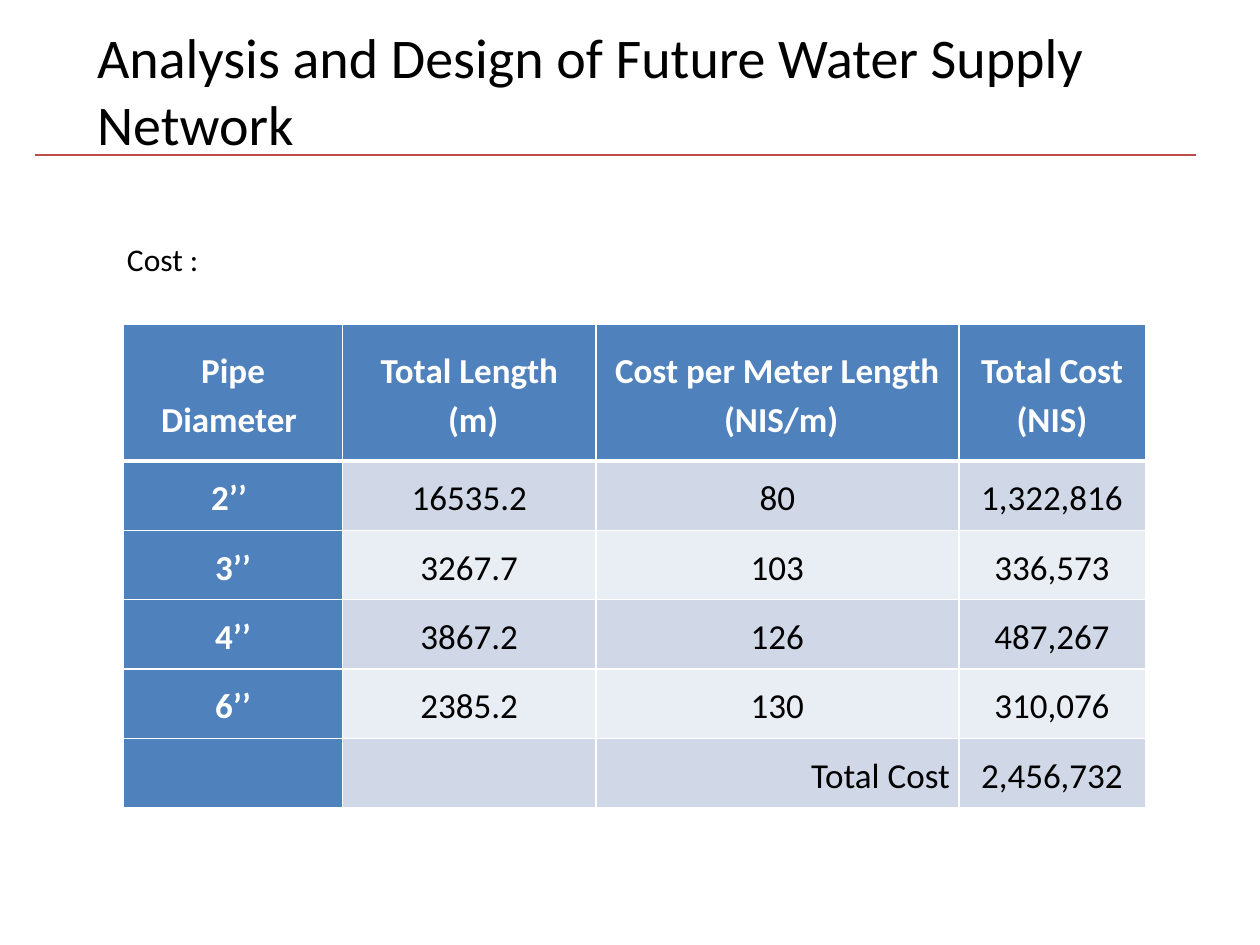
from lxml import etree
from pptx import Presentation
from pptx.dml.color import RGBColor
from pptx.enum.shapes import MSO_CONNECTOR
from pptx.enum.text import MSO_ANCHOR, MSO_AUTO_SIZE, PP_ALIGN
from pptx.oxml.ns import qn
from pptx.util import Inches, Pt

LEFT, CENTER, RIGHT = PP_ALIGN.LEFT, PP_ALIGN.CENTER, PP_ALIGN.RIGHT
TOP, MIDDLE = MSO_ANCHOR.TOP, MSO_ANCHOR.MIDDLE
NO_AUTOFIT = MSO_AUTO_SIZE.NONE
STRAIGHT = MSO_CONNECTOR.STRAIGHT
TITLE_ONLY = 5

TITLE = "Analysis and Design of Future Water Supply Network"
CAPTION = "Cost :"
ROWS = [
    ["Pipe Diameter ", "Total Length\n (m)", "Cost per Meter Length\n (NIS/m)", "Total Cost (NIS)"],
    ["2’’ ", "16535.2", "80", "1,322,816"],
    ["3’’", "3267.7", "103", "336,573"],
    ["4’’", "3867.2", "126", "487,267"],
    ["6’’", "2385.2", "130", "310,076"],
    ["", "", "Total Cost", "2,456,732"],
]
COLORS = {
    "text": "000000",
    "white": "FFFFFF",
    "rule": "BF4C48",
    "header": "4F81BD",
    "odd": "D0D8E8",
    "even": "E9EDF4",
}
FONT = "Calibri"
TITLE_BOX = (0.67, 0.13, 8.43, 1.18)
RULE_ENDS = (0.28, 1.23, 9.49, 1.23)
CAPTION_BOX = (0.91, 1.86, 3.86, 0.4)
TABLE_ORIGIN = (0.98, 2.57)
COLUMN_WIDTHS = [1.74, 2.01, 2.88, 1.48]
ROW_HEIGHTS = [1.09] + [0.55] * (len(ROWS) - 1)
CELL_FORMAT = {
    "margin_left": Inches(0.07),
    "margin_right": Inches(0.07),
    "margin_top": 0,
    "margin_bottom": 0,
    "vertical_anchor": MIDDLE,
}
FRAME_FORMAT = {"word_wrap": True, "auto_size": NO_AUTOFIT, "vertical_anchor": TOP}


def color(name):
    return RGBColor.from_string(COLORS[name])


def apply_format(target, values):
    for name, value in values.items():
        setattr(target, name, value)


def write_text(frame, text, size, color_name="text", bold=False, align=LEFT, spacing=1.0):
    frame.text = text
    for paragraph in frame.paragraphs:
        apply_format(paragraph, {"alignment": align, "line_spacing": spacing})
        apply_format(paragraph.font, {"name": FONT, "size": Pt(size), "bold": bold})
        paragraph.font.color.rgb = color(color_name)


def add_borders(cell, widths):
    properties = cell._tc.get_or_add_tcPr()
    for side, width in widths.items():
        line = etree.SubElement(properties, qn(f"a:ln{side}"), w=str(Pt(width)))
        fill = etree.SubElement(line, qn("a:solidFill"))
        etree.SubElement(fill, qn("a:srgbClr"), val=COLORS["white"])


def place_text(shape, box, text, size):
    shape.left, shape.top, shape.width, shape.height = map(Inches, box)
    apply_format(shape.text_frame, FRAME_FORMAT)
    write_text(shape.text_frame, text, size)


def add_rule(slide):
    rule = slide.shapes.add_connector(STRAIGHT, *map(Inches, RULE_ENDS))
    rule.line.color.rgb = color("rule")
    rule.line.width = Pt(0.75)
    etree.SubElement(rule._element.spPr, qn("a:effectLst"))


def format_cell(cell, text, row, column):
    is_header = row == 0 or column == 0
    band = "odd" if row % 2 else "even"
    apply_format(cell, CELL_FORMAT)
    add_borders(cell, {"L": 1, "R": 1, "T": 3 if row == 1 else 1, "B": 3 if row == 0 else 1})
    cell.fill.solid()
    cell.fill.fore_color.rgb = color("header" if is_header else band)
    write_text(
        cell.text_frame,
        text,
        20,
        color_name="white" if is_header else "text",
        bold=is_header,
        align=RIGHT if text == "Total Cost" else CENTER,
        spacing=1.15,
    )


def add_cost_table(slide):
    size = (sum(COLUMN_WIDTHS), sum(ROW_HEIGHTS))
    table = slide.shapes.add_table(
        len(ROWS), len(COLUMN_WIDTHS), *map(Inches, TABLE_ORIGIN + size)
    ).table
    table.first_col = True
    for column, width in zip(table.columns, COLUMN_WIDTHS):
        column.width = Inches(width)
    for row, height in zip(table.rows, ROW_HEIGHTS):
        row.height = Inches(height)
    for row, texts in enumerate(ROWS):
        for column, text in enumerate(texts):
            format_cell(table.cell(row, column), text, row, column)


def main():
    presentation = Presentation()
    presentation.slide_width, presentation.slide_height = Inches(10), Inches(7.5)
    slide = presentation.slides.add_slide(presentation.slide_layouts[TITLE_ONLY])
    place_text(slide.shapes.title, TITLE_BOX, TITLE, 32)
    add_rule(slide)
    caption = slide.shapes.add_textbox(*map(Inches, CAPTION_BOX))
    place_text(caption, CAPTION_BOX, CAPTION, 18)
    add_cost_table(slide)
    presentation.save("out.pptx")


if __name__ == "__main__":
    main()
